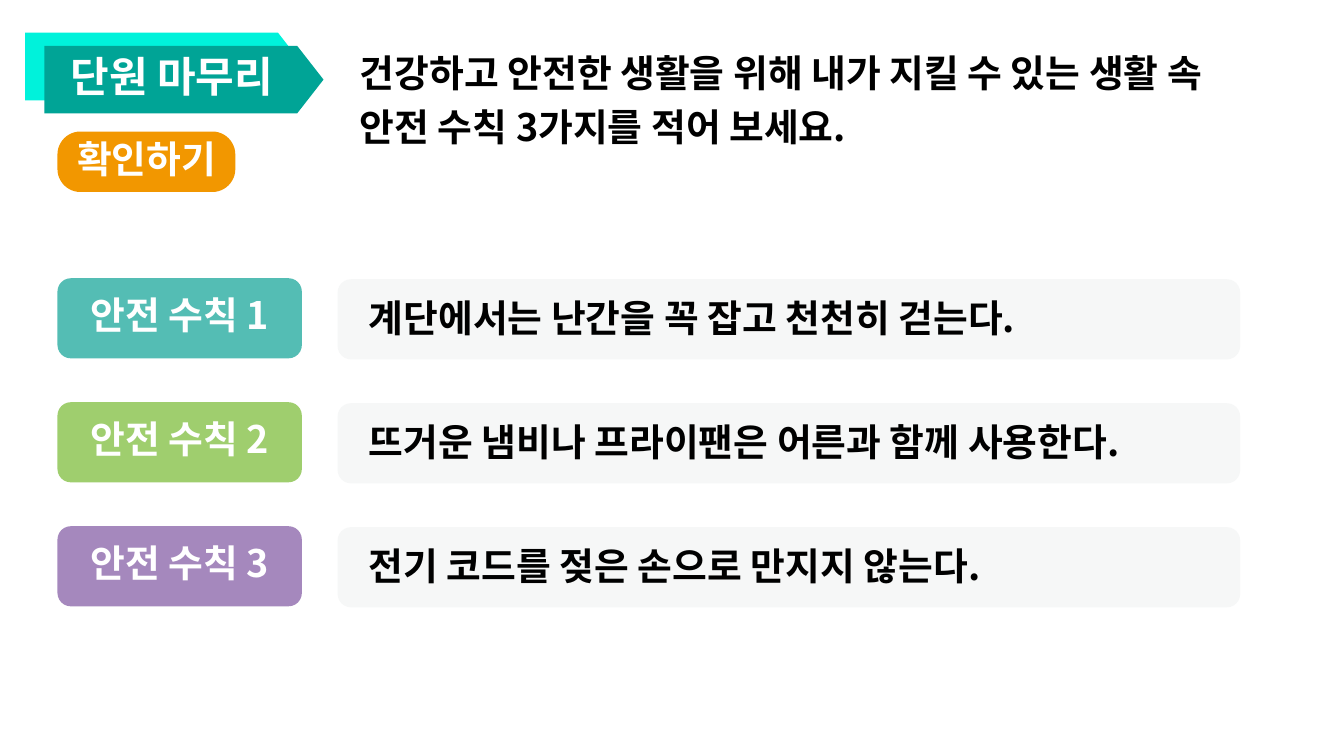
from lxml.etree import SubElement
from pptx import Presentation
from pptx.dml.color import RGBColor
from pptx.enum.shapes import MSO_SHAPE
from pptx.enum.text import MSO_ANCHOR, MSO_AUTO_SIZE, PP_ALIGN
from pptx.oxml.ns import qn
from pptx.util import Pt

PX = 9144  # 100 px to the inch
FONT = "Noto Sans CJK KR"
WHITE = RGBColor(0xFF, 0xFF, 0xFF)
BLACK = RGBColor(0x00, 0x00, 0x00)
ORANGE = RGBColor(0xF2, 0x97, 0x00)
AQUA = RGBColor(0x00, 0xF2, 0xDB)
TEAL = RGBColor(0x00, 0xA4, 0x96)
MINT = RGBColor(0x54, 0xBD, 0xB4)
GREEN = RGBColor(0x9F, 0xCE, 0x6E)
PURPLE = RGBColor(0xA5, 0x88, 0xBD)
PALE = RGBColor(0xF6, 0xF7, 0xF7)

QUESTION = "건강하고 안전한 생활을 위해 내가 지킬 수 있는 생활 속 안전 수칙 3가지를 적어 보세요."
RULES = [
    (MINT, "계단에서는 난간을 꼭 잡고 천천히 걷는다."),
    (GREEN, "뜨거운 냄비나 프라이팬은 어른과 함께 사용한다."),
    (PURPLE, "전기 코드를 젖은 손으로 만지지 않는다."),
]
RULES_TOP, RULE_PITCH = 552, 246


def emu(*lengths):
    return [length * PX for length in lengths]


def set_all(target, values):
    for name, value in values.items():
        setattr(target, name, value)


def add_panel(slide, preset, box, color, corner=None):
    panel = slide.shapes.add_shape(preset, *emu(*box))
    panel.shadow.inherit = False
    panel.fill.solid()
    panel.fill.fore_color.rgb = color
    panel.line.fill.background()
    if corner is not None:
        panel.adjustments[0] = corner


def write(frame, text, color, size=54, spacing=0.9, align=PP_ALIGN.LEFT, **frame_format):
    set_all(frame, {"word_wrap": True, "auto_size": MSO_AUTO_SIZE.SHAPE_TO_FIT_TEXT,
                    "vertical_anchor": MSO_ANCHOR.TOP, **frame_format})
    paragraph = frame.paragraphs[0]
    set_all(paragraph, {"alignment": align, "line_spacing": spacing})
    run = paragraph.add_run()
    run.text = text
    set_all(run.font, {"name": FONT, "size": Pt(size), "bold": True})
    run.font.color.rgb = color
    SubElement(run.font._element, qn("a:ea"), typeface=FONT)


def add_label(slide, box, text, color, **text_format):
    label = slide.shapes.add_textbox(*emu(*box))
    write(label.text_frame, text, color, **text_format)


def add_question(slide, left, top, width, height):
    title = slide.shapes.title
    set_all(title, dict(zip(("left", "top", "width", "height"), emu(left, top, width, height))))
    write(title.text_frame, QUESTION, BLACK, spacing=1.2)


def add_unit_banner(slide, left, top):
    for offset_x, offset_y, color in ((0, 0, AQUA), (38, 26, TEAL)):
        add_panel(slide, MSO_SHAPE.PENTAGON,
                  (left + offset_x, top + offset_y, 554, 134), color, 0.39)
    add_label(slide, (left + 80, top + 42, 441, 101), "단원 마무리", WHITE, size=60)


def add_check_badge(slide, left, top):
    add_panel(slide, MSO_SHAPE.ROUNDED_RECTANGLE, (left, top, 353, 120), ORANGE, 0.38)
    margins = dict.fromkeys(("margin_left", "margin_top", "margin_right", "margin_bottom"), 6 * PX)
    add_label(slide, (left + 29, top + 13, 296, 93), "확인하기", WHITE, align=PP_ALIGN.CENTER,
              word_wrap=False, vertical_anchor=MSO_ANCHOR.MIDDLE, **margins)


def add_rule_row(slide, left, top, number, color, rule):
    add_panel(slide, MSO_SHAPE.ROUNDED_RECTANGLE, (left, top, 485, 159), color)
    add_label(slide, (left + 36, top + 33, 414, 92), f"안전 수칙 {number}", WHITE,
              align=PP_ALIGN.CENTER)
    add_panel(slide, MSO_SHAPE.ROUNDED_RECTANGLE, (left + 556, top + 2, 1791, 159), PALE)
    add_label(slide, (left + 608, top + 28, 1564, 101), rule, BLACK, spacing=1.0)


def main():
    deck = Presentation()
    deck.slide_width, deck.slide_height = emu(2667, 1500)
    slide = deck.slides.add_slide(deck.slide_layouts.get_by_name("Title Only"))
    add_check_badge(slide, 114, 261)
    add_question(slide, 704, 75, 1695, 219)
    add_unit_banner(slide, 50, 65)
    for index, (color, rule) in enumerate(RULES):
        add_rule_row(slide, 114, RULES_TOP + index * RULE_PITCH, index + 1, color, rule)
    deck.save("out.pptx")


if __name__ == "__main__":
    main()
